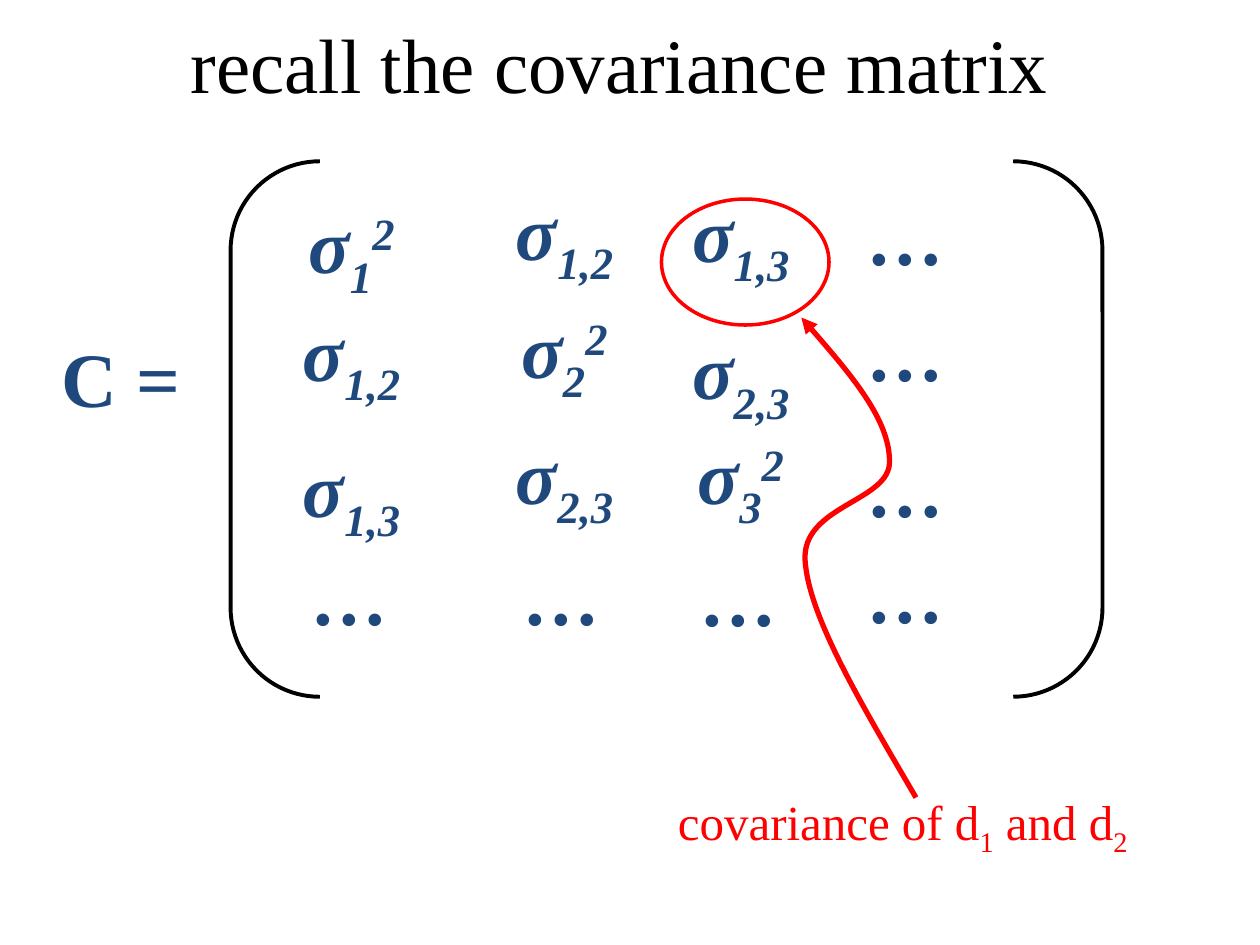
from dataclasses import dataclass

from lxml import etree
from pptx import Presentation
from pptx import util as u
from pptx.dml.color import RGBColor
from pptx.enum import shapes, text
from pptx.oxml.ns import qn


@dataclass(frozen=True)
class Theme:
    face: str = "Times New Roman"
    ink: str = "000000"
    blue: str = "1F497D"
    red: str = "FF0000"
    big: int = 44
    note: int = 28
    sub: int = -25
    sup: int = 30


class Deck:
    def __init__(self, theme):
        self.theme = theme
        self.prs = Presentation()
        self.prs.slide_width = u.Inches(10)
        self.prs.slide_height = u.Inches(7.5)
        self.slide = self.prs.slides.add_slide(self.prs.slide_layouts[6])

    def label(self, box, runs, size, color, bold=False, italic=False):
        frame = self.slide.shapes.add_textbox(*map(u.Inches, box)).text_frame
        frame.word_wrap = True
        frame.vertical_anchor = text.MSO_ANCHOR.MIDDLE
        para = frame.paragraphs[0]
        para.alignment = text.PP_ALIGN.CENTER
        font = para.font
        font.name, font.size = self.theme.face, u.Pt(size)
        font.bold, font.italic = bold, italic
        font.color.rgb = RGBColor.from_string(color)
        for words, base in runs:
            run = para.add_run()
            run.text = words
            if base:
                run._r.get_or_add_rPr().set("baseline", str(base * 1000))

    def trace(self, shape, color, width):
        shape.shadow.inherit = False
        shape.fill.background()
        shape.line.color.rgb = RGBColor.from_string(color)
        shape.line.width = u.Pt(width)

    def outline(self, kind, box, color, width):
        shape = self.slide.shapes.add_shape(kind, *map(u.Inches, box))
        self.trace(shape, color, width)

    def curve(self, start, knots, color, width):
        pen = self.slide.shapes.build_freeform(*map(u.Inches, start))
        pen.add_line_segments(
            [tuple(map(u.Inches, knot)) for knot in knots], close=False)
        shape = pen.convert_to_shape()
        self.trace(shape, color, width)
        path = shape._element.spPr.find(".//" + qn("a:path"))
        lines = path.findall(qn("a:lnTo"))
        for i in range(0, len(lines), 3):
            bend = etree.SubElement(path, qn("a:cubicBezTo"))
            for line in lines[i:i + 3]:
                bend.append(line[0])
                path.remove(line)
        edge = shape.line._get_or_add_ln()
        etree.SubElement(edge, qn("a:headEnd"), type="triangle")

    def save(self):
        self.prs.save("out.pptx")


def main():
    theme = Theme()
    deck = Deck(theme)

    deck.label((0.42, 0, 9, 1), [("recall the covariance matrix", 0)],
               theme.big, theme.ink)
    deck.outline(shapes.MSO_SHAPE.DOUBLE_BRACKET, (1.83, 1.28, 6.92, 4.25),
                 theme.ink, 2.25)
    deck.label((0, 2.53, 1.92, 0.92), [("C =", 0)],
               theme.big, theme.blue, bold=True)

    lefts = (1.83, 3.52, 4.92, 6.25)
    tops = (
        (1.52, 1.41, 1.43, 1.40),
        (2.37, 2.35, 2.52, 2.32),
        (3.45, 3.35, 3.35, 3.40),
        (4.26, 4.26, 4.27, 4.24),
    )
    last = len(lefts) - 1
    for row, line in enumerate(tops):
        for col, top in enumerate(line):
            low, high = sorted((row + 1, col + 1))
            if last in (row, col):
                runs = [("…", 0)]
            elif row == col:
                runs = [("σ", 0), (str(low), theme.sub), ("2", theme.sup)]
            else:
                runs = [("σ", 0), (f"{low},{high}", theme.sub)]
            deck.label((lefts[col], top, 1.92, 0.92), runs,
                       theme.big, theme.blue, bold=True, italic=True)

    deck.outline(shapes.MSO_SHAPE.OVAL, (5.25, 1.58, 1.33, 1), theme.red, 2)
    deck.label((4.58, 6.17, 5.17, 0.75),
               [("covariance of d", 0), ("1", theme.sub),
                (" and d", 0), ("2", theme.sub)],
               theme.note, theme.red)
    deck.curve((6.36, 2.52),
               [(6.71, 2.92), (7.06, 3.33), (7.06, 3.66),
                (7.07, 3.98), (6.36, 4.01), (6.39, 4.45),
                (6.42, 4.9), (6.85, 5.61), (7.27, 6.33)],
               theme.red, 3)
    deck.save()


if __name__ == "__main__":
    main()
